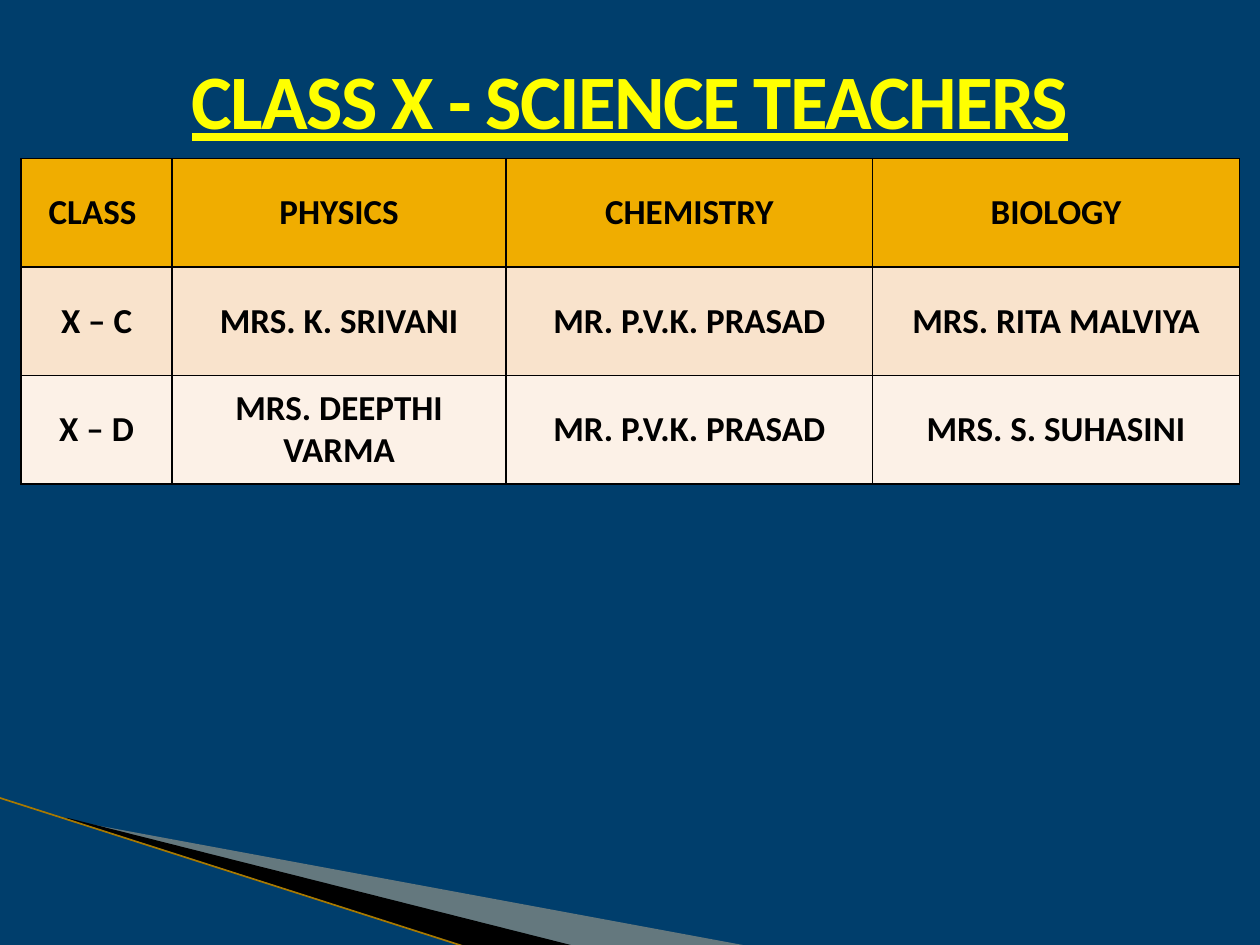
from dataclasses import dataclass

from lxml.etree import SubElement
from pptx import Presentation
from pptx.dml.color import RGBColor
from pptx.enum.shapes import MSO_CONNECTOR
from pptx.enum.text import MSO_ANCHOR, MSO_AUTO_SIZE, PP_ALIGN
from pptx.oxml.ns import qn
from pptx.util import Inches, Pt


@dataclass(frozen=True)
class Theme:
    font: str = "Calibri"
    title_size: int = 44
    cell_size: int = 20
    background: str = "003E6C"
    title: str = "FFFF00"
    ink: str = "000000"
    sand: str = "FCCF9B"
    edge: str = "A87900"
    rows: tuple = ("F0AD00", "F9E3CC", "FCF1E7")


THEME = Theme()
WIDTH, HEIGHT = Inches(10), Inches(7.5)
MARGIN = WIDTH // 60

TEACHERS = [
    ["CLASS ", "PHYSICS", "CHEMISTRY", "BIOLOGY"],
    ["X – C", "MRS. K. SRIVANI", "MR. P.V.K. PRASAD", "MRS. RITA MALVIYA"],
    ["X – D", "MRS. DEEPTHI VARMA", "MR. P.V.K. PRASAD", "MRS. S. SUHASINI"],
]
COLUMN_WIDTHS = [1.2, 2.65, 2.91, 2.91]
ROW_HEIGHT = 0.86


def rgb(code):
    return RGBColor.from_string(code)


def style_text(paragraph, size, color):
    paragraph.alignment = PP_ALIGN.CENTER
    font = paragraph.font
    font.name, font.size, font.bold = THEME.font, Pt(size), True
    font.color.rgb = rgb(color)


def set_frame(wedge, frame):
    """Give the wedge its own frame; its corners stay in place on the slide."""
    left, top, width, height = (Inches(value) for value in frame)
    shift_x, shift_y = wedge.left - left, wedge.top - top
    outline = next(wedge._element.iter(qn("a:path")))
    outline.set("w", str(width))
    outline.set("h", str(height))
    for corner in outline.iter(qn("a:pt")):
        corner.set("x", str(int(corner.get("x")) + shift_x))
        corner.set("y", str(int(corner.get("y")) + shift_y))
    wedge.left, wedge.top, wedge.width, wedge.height = left, top, width, height


def add_wedge(slide, points, frame, color, opacity=100):
    corners = [(Inches(x), Inches(y)) for x, y in points]
    builder = slide.shapes.build_freeform(*corners[0])
    builder.add_line_segments(corners[1:], close=True)
    wedge = builder.convert_to_shape()
    set_frame(wedge, frame)
    wedge.shadow.inherit = False
    wedge.line.fill.background()
    wedge.fill.solid()
    wedge.fill.fore_color.rgb = rgb(color)
    if opacity < 100:
        tint = wedge.fill._xPr.find(qn("a:solidFill"))[0]
        SubElement(tint, qn("a:alpha"), val=str(opacity * 1000))


def add_edge(slide, start, end):
    ends = [Inches(value) for value in (*start, *end)]
    edge = slide.shapes.add_connector(MSO_CONNECTOR.STRAIGHT, *ends)
    edge.line.color.rgb = rgb(THEME.edge)
    edge.line.width = Pt(0.95)
    SubElement(edge._element.spPr, qn("a:effectLst"))


def fill_title(title, wording):
    title.left, title.top, title.width, title.height = 0, 0, WIDTH, Inches(1.21)
    frame = title.text_frame
    frame.text = wording
    frame.word_wrap = True
    frame.auto_size = MSO_AUTO_SIZE.SHAPE_TO_FIT_TEXT
    frame.vertical_anchor = MSO_ANCHOR.TOP
    heading = frame.paragraphs[0]
    heading.line_spacing = 1.5
    # Hanging indent
    indent = Inches(0.38)
    properties = heading._p.get_or_add_pPr()
    properties.set("marL", str(indent))
    properties.set("indent", str(-indent))
    style_text(heading, THEME.title_size, THEME.title)
    heading.font.underline = True
    # Slightly tightened letters
    heading.runs[0].font._element.set("spc", "-100")


def add_borders(cell):
    properties = cell._tc.get_or_add_tcPr()
    for position, side in enumerate(("lnL", "lnR", "lnT", "lnB")):
        border = SubElement(properties, qn(f"a:{side}"), w=str(Pt(1)))
        properties.insert(position, border)
        paint = SubElement(border, qn("a:solidFill"))
        SubElement(paint, qn("a:srgbClr"), val=THEME.ink)


def add_teacher_table(slide):
    table = slide.shapes.add_table(
        len(TEACHERS), len(COLUMN_WIDTHS), MARGIN, Inches(1.26),
        Inches(sum(COLUMN_WIDTHS)), Inches(ROW_HEIGHT * len(TEACHERS)),
    ).table
    for column, width in zip(table.columns, COLUMN_WIDTHS):
        column.width = Inches(width)
    for row, entries, color in zip(table.rows, TEACHERS, THEME.rows):
        row.height = Inches(ROW_HEIGHT)
        for cell, entry in zip(row.cells, entries):
            cell.text = entry
            cell.vertical_anchor = MSO_ANCHOR.MIDDLE
            cell.fill.solid()
            cell.fill.fore_color.rgb = rgb(color)
            style_text(cell.text_frame.paragraphs[0], THEME.cell_size, THEME.ink)
            add_borders(cell)


def main():
    deck = Presentation()
    deck.slide_width, deck.slide_height = WIDTH, HEIGHT
    slide = deck.slides.add_slide(deck.slide_layouts[5])  # Title Only
    slide.background.fill.solid()
    slide.background.fill.fore_color.rgb = rgb(THEME.background)

    # Sweep in the bottom left corner
    add_wedge(slide, [(0.55, 6.51), (5.95, 7.51), (4.56, 7.51), (0.55, 6.5)],
              (0.78, 5.47, 4.16, 1.58), THEME.sand, opacity=40)
    add_wedge(slide, [(0.53, 6.49), (4.57, 7.51), (3.72, 7.52), (0.54, 6.5)],
              (-0.06, 6.33, 4.16, 0.92), THEME.ink)
    add_edge(slide, (-0.01, 6.33), (3.71, 7.52))

    # Heading and teachers by subject
    fill_title(slide.shapes.title, "CLASS X - SCIENCE TEACHERS")
    add_teacher_table(slide)

    deck.save("out.pptx")


if __name__ == "__main__":
    main()
